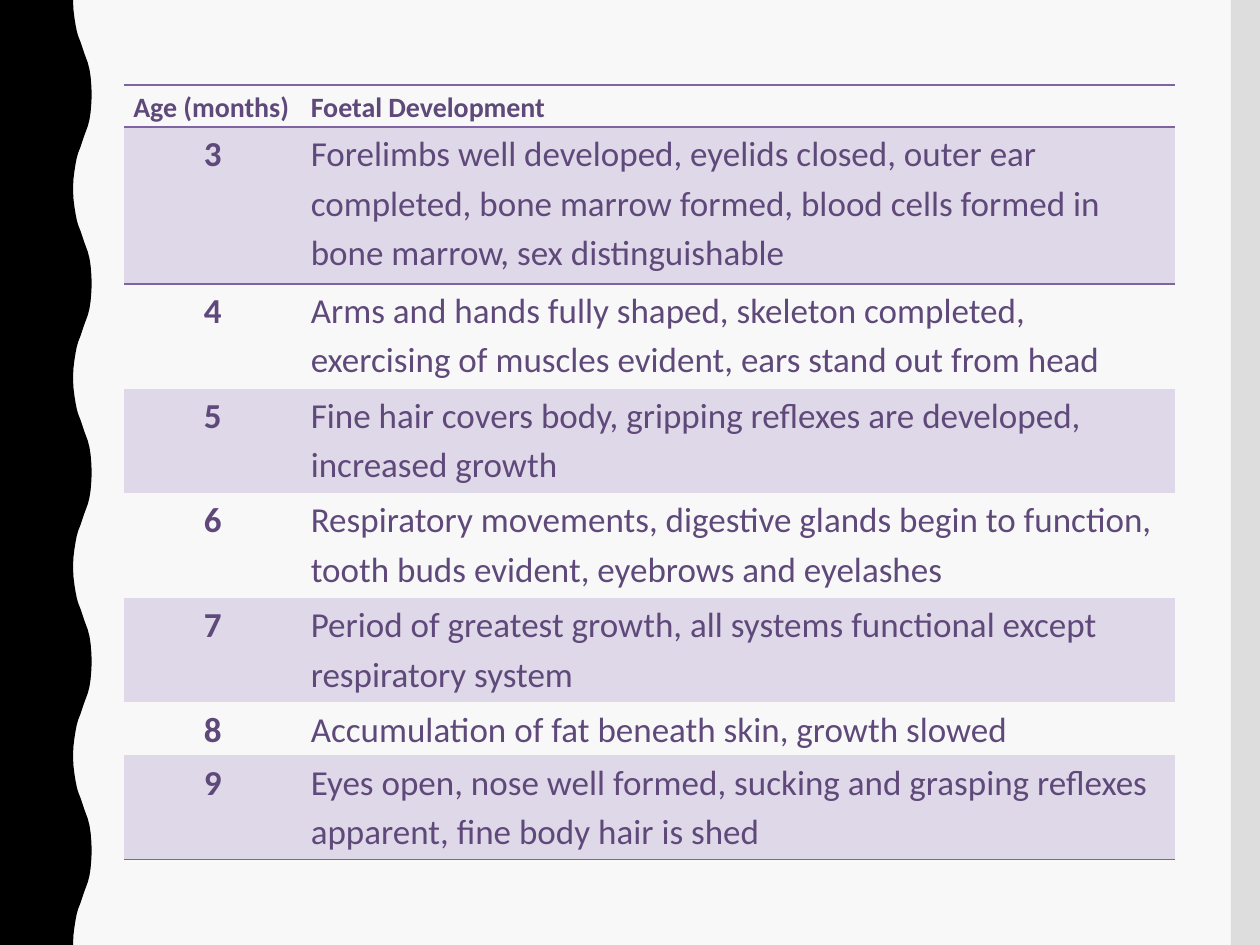
from dataclasses import dataclass

from lxml import etree
from pptx import Presentation
from pptx.dml.color import RGBColor
from pptx.enum.shapes import MSO_SHAPE
from pptx.enum.text import PP_ALIGN
from pptx.oxml.ns import qn
from pptx.util import Pt

RECT = MSO_SHAPE.RECTANGLE
LEFT, CENTER = PP_ALIGN.LEFT, PP_ALIGN.CENTER
PLAIN_TABLE = "{2D5ABB26-0587-4C30-8999-92F81FD0307C}"
WIDTH, HEIGHT = 720, 540


@dataclass(frozen=True)
class Theme:
    font: str = "Calibri"
    background: str = "F8F8F8"
    wave: str = "000000"
    strip: str = "DDDDDD"
    text: str = "5F497A"
    band: str = "DFD8E8"
    rule: str = "8064A2"
    header_size: int = 16
    body_size: int = 20
    line_spacing: float = 1.15


class SlideBuilder:
    def __init__(self, slide, theme):
        self.s = slide
        self.theme = theme
        fill = slide.background.fill
        fill.solid()
        fill.fore_color.rgb = RGBColor.from_string(theme.background)

    def paint(self, sp, color):
        sp.shadow.inherit = False
        sp.fill.solid()
        sp.fill.fore_color.rgb = RGBColor.from_string(color)
        sp.line.fill.background()

    def rect(self, x, y, w, h, color):
        self.paint(self.s.shapes.add_shape(RECT, Pt(x), Pt(y), Pt(w), Pt(h)), color)

    def outline(self, points, color):
        builder = self.s.shapes.build_freeform(
            Pt(points[0][0]), Pt(points[0][1]), scale=1.0)
        builder.add_line_segments([(Pt(x), Pt(y)) for x, y in points[1:]], close=True)
        self.paint(builder.convert_to_shape(), color)

    def border(self, cell, side):
        ln = etree.Element(qn(f"a:ln{side}"), w=str(Pt(1)))
        fill = etree.SubElement(ln, qn("a:solidFill"))
        etree.SubElement(fill, qn("a:srgbClr"), val=self.theme.rule)
        cell._tc.get_or_add_tcPr().insert(0, ln)

    def cell(self, cell, text, size, bold, align, band):
        margins = {"margin_left": Pt(5.4), "margin_right": Pt(5.4),
                   "margin_top": 0, "margin_bottom": 0}
        for name, value in margins.items():
            setattr(cell, name, value)
        if band:
            cell.fill.solid()
            cell.fill.fore_color.rgb = RGBColor.from_string(self.theme.band)
        else:
            cell.fill.background()
        p = cell.text_frame.paragraphs[0]
        p.alignment = align
        p.line_spacing = self.theme.line_spacing
        r = p.add_run()
        r.text = text
        for name, value in {"name": self.theme.font, "size": Pt(size), "bold": bold}.items():
            setattr(r.font, name, value)
        r.font.color.rgb = RGBColor.from_string(self.theme.text)

    def table(self, x, y, col_widths, row_heights, rows):
        table = self.s.shapes.add_table(
            len(rows), len(col_widths), Pt(x), Pt(y),
            Pt(sum(col_widths)), Pt(sum(row_heights))).table
        table.first_row = table.horz_banding = False
        table._tbl.tblPr.find(qn("a:tableStyleId")).text = PLAIN_TABLE
        for column, width in zip(table.columns, col_widths):
            column.width = Pt(width)
        last = len(rows) - 1
        for i, (row, height) in enumerate(zip(rows, row_heights)):
            table.rows[i].height = Pt(height)
            header = i == 0
            size = self.theme.header_size if header else self.theme.body_size
            for j, text in enumerate(row):
                cell = table.cell(i, j)
                align = CENTER if j == 0 and not header else LEFT
                self.cell(cell, text, size, header or j == 0, align, i % 2 == 1)
                # Rules around the header and below the last row
                if i in (0, last):
                    self.border(cell, "B")
                if i in (0, 1):
                    self.border(cell, "T")


# One half wave, trough to crest; the other half mirrors it
HALF_WAVE = [(41.8, 0), (41.9, 5), (42.5, 10), (43.2, 14.4), (43.9, 18),
             (44.8, 21), (46, 24), (47, 27), (48, 30), (49.1, 33),
             (50.2, 36), (51.1, 39.6), (51.8, 44), (52.2, 49), (52.4, 54)]
WAVE_LENGTH = 108

ROWS = [
    ("Age (months)", "Foetal Development"),
    ("3", "Forelimbs well developed, eyelids closed, outer ear completed, "
          "bone marrow formed, blood cells formed in bone marrow, sex distinguishable"),
    ("4", "Arms and hands fully shaped, skeleton completed, "
          "exercising of muscles evident, ears stand out from head"),
    ("5", "Fine hair covers body, gripping reflexes are developed, increased growth"),
    ("6", "Respiratory movements, digestive glands begin to function, "
          "tooth buds evident, eyebrows and eyelashes"),
    ("7", "Period of greatest growth, all systems functional except respiratory system"),
    ("8", "Accumulation of fat beneath skin, growth slowed"),
    ("9", "Eyes open, nose well formed, sucking and grasping reflexes apparent, "
          "fine body hair is shed"),
]
ROW_HEIGHTS = [24, 89.6, 60, 59.6, 60, 59.6, 30.2, 59.6]


def main():
    prs = Presentation()
    prs.slide_width, prs.slide_height = Pt(WIDTH), Pt(HEIGHT)
    slide = SlideBuilder(prs.slides.add_slide(prs.slide_layouts[6]), Theme())

    # Wavy left edge and right strip
    wave = HALF_WAVE + [(x, WAVE_LENGTH - y) for x, y in HALF_WAVE[-2::-1]]
    edge = [(x, y + top) for top in range(0, HEIGHT, WAVE_LENGTH) for x, y in wave]
    slide.outline([(0, 0), *edge, (0, HEIGHT)], slide.theme.wave)
    slide.rect(703.4, 0, 16.6, HEIGHT, slide.theme.strip)

    # Development table
    slide.table(70.8, 48.7, [101.4, 499.2], ROW_HEIGHTS, ROWS)

    prs.save("out.pptx")


if __name__ == "__main__":
    main()
